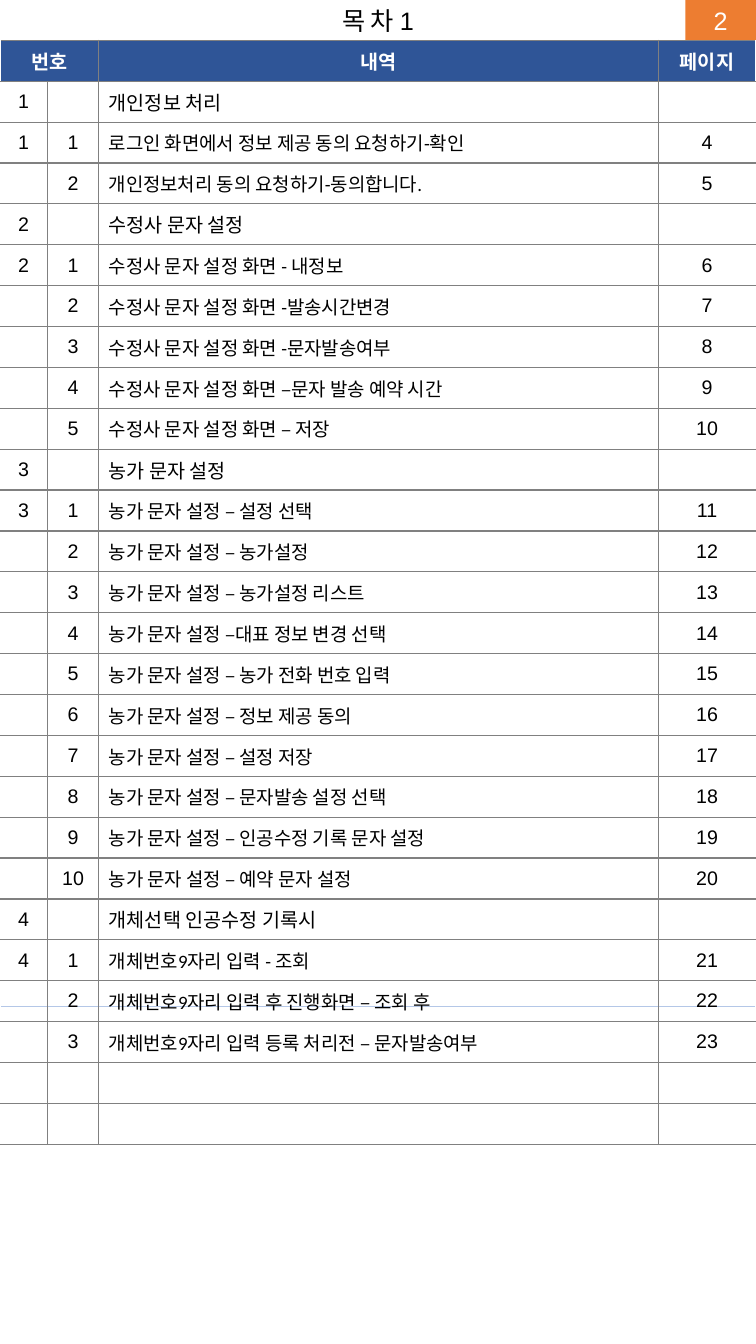
import itertools
from dataclasses import dataclass

import pptx
import pptx.dml.color
import pptx.enum.shapes
import pptx.enum.text
import pptx.oxml
import pptx.oxml.ns
import pptx.util

Inches = pptx.util.Inches
RGB = pptx.dml.color.RGBColor.from_string
ALIGN = pptx.enum.text.PP_ALIGN
MIDDLE = pptx.enum.text.MSO_ANCHOR.MIDDLE


@dataclass
class Theme:
    orange: str = "ED7D31"
    navy: str = "2F5597"
    rule: str = "B4C7E7"
    border: str = "808080"
    black: str = "000000"
    white: str = "FFFFFF"
    title_size: float = 18
    cell_size: float = 14
    item_size: float = 13.5
    font: str = "Arial"
    item_font: str = "Calibri"


theme = Theme()


def write(tf, text, size=theme.cell_size, font=theme.font, color=theme.black,
          bold=False, align=ALIGN.CENTER):
    p = tf.paragraphs[0]
    p.alignment = align
    r = p.add_run()
    r.text = text
    r.font.size = pptx.util.Pt(size)
    r.font.name = font
    r.font.bold = bold
    r.font.color.rgb = RGB(color)


def add_border(cell, sides):
    tcPr = cell._tc.get_or_add_tcPr()
    for side in sides:
        tcPr.append(pptx.oxml.parse_xml(
            f'<a:ln{side} {pptx.oxml.ns.nsdecls("a")} w="12700">'
            f'<a:solidFill><a:srgbClr val="{theme.border}"/></a:solidFill></a:ln{side}>'))


WIDTH, HEIGHT = 7.5, 13.33
BAR = 0.4
COLS = [0.47, 0.51, 5.55, 0.97]
ROW = 10.95 / 27
BLANK_ROWS = 2
FIRST_PAGE = 4

sections = [
    ("개인정보 처리", [
        "로그인 화면에서 정보 제공 동의 요청하기-확인",
        "개인정보처리 동의 요청하기-동의합니다.",
    ]),
    ("수정사 문자 설정", [
        "수정사 문자 설정 화면 - 내정보",
        "수정사 문자 설정 화면 -발송시간변경",
        "수정사 문자 설정 화면 -문자발송여부",
        "수정사 문자 설정 화면 –문자 발송 예약 시간",
        "수정사 문자 설정 화면 – 저장",
    ]),
    ("농가 문자 설정", [
        "농가 문자 설정 – 설정 선택",
        "농가 문자 설정 – 농가설정",
        "농가 문자 설정 – 농가설정 리스트",
        "농가 문자 설정 –대표 정보 변경 선택",
        "농가 문자 설정 – 농가 전화 번호 입력",
        "농가 문자 설정 – 정보 제공 동의",
        "농가 문자 설정 – 설정 저장",
        "농가 문자 설정 – 문자발송 설정 선택",
        "농가 문자 설정 – 인공수정 기록 문자 설정",
        "농가 문자 설정 – 예약 문자 설정",
    ]),
    ("개체선택 인공수정 기록시", [
        "개체번호9자리 입력 - 조회",
        "개체번호9자리 입력 후 진행화면 – 조회 후",
        "개체번호9자리 입력 등록 처리전 – 문자발송여부",
    ]),
]

rows = [("번호", "", "내역", "페이지")]
pages = itertools.count(FIRST_PAGE)
for number, (heading, items) in enumerate(sections, 1):
    rows.append((str(number), "", heading, ""))
    for i, item in enumerate(items, 1):
        rows.append((str(number) if i == 1 else "", str(i), item, str(next(pages))))
rows += [("", "", "", "")] * BLANK_ROWS

prs = pptx.Presentation()
prs.slide_width, prs.slide_height = Inches(WIDTH), Inches(HEIGHT)
s = prs.slides.add_slide(prs.slide_layouts[5])

page_box = s.shapes.add_shape(pptx.enum.shapes.MSO_SHAPE.RECTANGLE,
                              Inches(WIDTH - 0.7), 0, Inches(0.7), Inches(BAR))
page_box.shadow.inherit = False
page_box.fill.solid()
page_box.fill.fore_color.rgb = RGB(theme.orange)
page_box.line.fill.background()
page_box.text_frame.vertical_anchor = MIDDLE
write(page_box.text_frame, "2", size=theme.title_size, color=theme.white)

for y in (9.98, BAR):
    rule = s.shapes.add_connector(pptx.enum.shapes.MSO_CONNECTOR.STRAIGHT,
                                  0, Inches(y), Inches(WIDTH), Inches(y))
    rule.line.color.rgb = RGB(theme.rule)
    rule.line.width = pptx.util.Pt(0.5)
    rule._element.spPr.append(
        pptx.oxml.parse_xml(f'<a:effectLst {pptx.oxml.ns.nsdecls("a")}/>'))

table = s.shapes.add_table(len(rows), len(COLS), 0, Inches(BAR),
                           Inches(WIDTH), Inches(ROW * len(rows))).table
table.first_row = table.horz_banding = False
for column, width in zip(table.columns, COLS):
    column.width = Inches(width)

for y, row in enumerate(rows):
    table.rows[y].height = Inches(ROW)
    for x, text in enumerate(row):
        cell = table.cell(y, x)
        cell.vertical_anchor = MIDDLE
        cell.margin_top = cell.margin_bottom = Inches(0.03)
        add_border(cell, "RTB" if x == 0 else "LTB" if x == 3 else "LRTB")
        if y == 0:
            cell.fill.solid()
            cell.fill.fore_color.rgb = RGB(theme.navy)
            fmt = dict(color=theme.white, bold=True)
        else:
            cell.fill.background()
            fmt = dict(align=ALIGN.LEFT) if x == 2 else {}
            if x == 2 and row[1]:
                fmt.update(size=theme.item_size, font=theme.item_font)
        if text:
            write(cell.text_frame, text, **fmt)
table.cell(0, 0).merge(table.cell(0, 1))

title = s.shapes.title
title.left, title.top, title.width, title.height = 0, 0, Inches(WIDTH), Inches(BAR)
tf = title.text_frame
tf.auto_size = pptx.enum.text.MSO_AUTO_SIZE.NONE
tf.word_wrap = True
tf.vertical_anchor = MIDDLE
write(tf, "목 차 1", size=theme.title_size)

prs.save("out.pptx")
